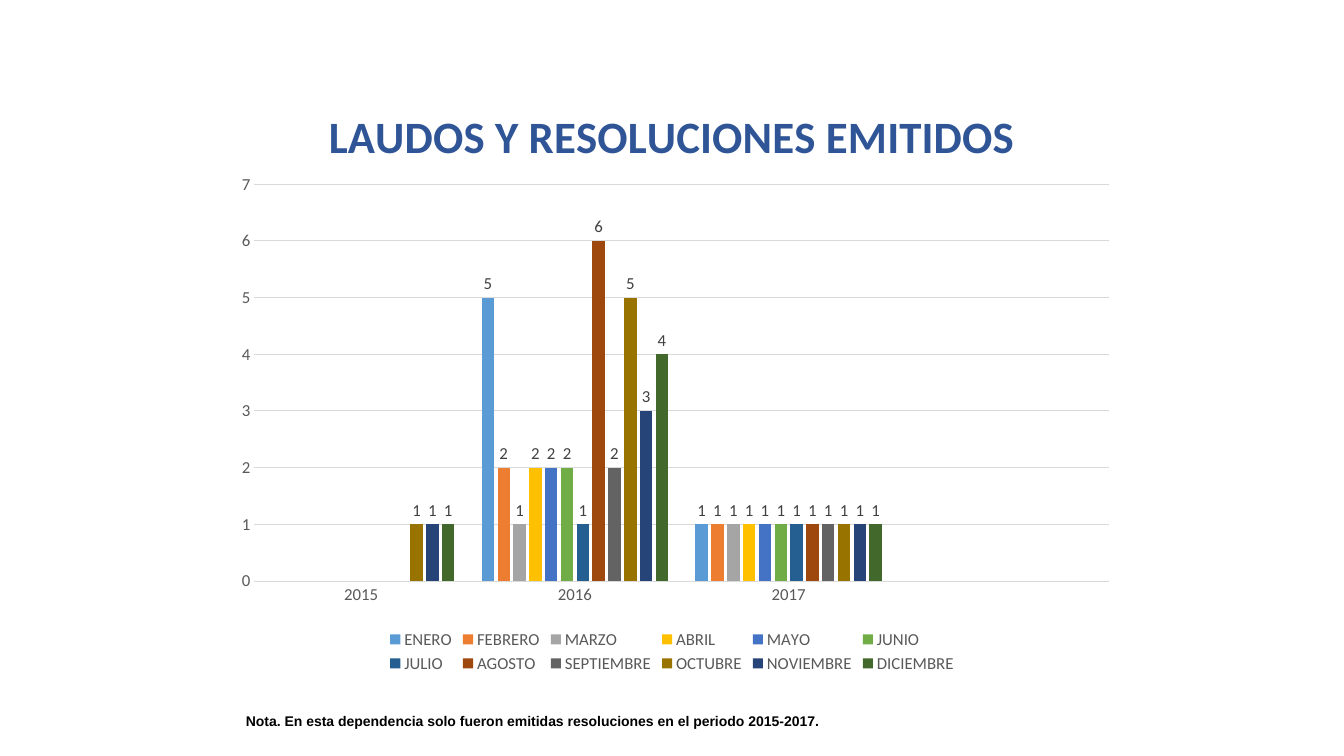
from dataclasses import dataclass

from lxml.etree import SubElement
from pptx import Presentation
from pptx.chart.chart import Chart
from pptx.chart.data import CategoryChartData
from pptx.chart.series import BarSeries
from pptx.dml.color import RGBColor
from pptx.enum.chart import XL_CHART_TYPE as ChartType
from pptx.enum.chart import XL_LABEL_POSITION as LabelPosition
from pptx.enum.chart import XL_LEGEND_POSITION as LegendPosition
from pptx.enum.chart import XL_TICK_MARK as TickMark
from pptx.enum.text import MSO_AUTO_SIZE as AutoSize
from pptx.oxml.ns import qn
from pptx.slide import Slide
from pptx.text.text import Font
from pptx.util import Inches, Pt

COLORS = {
    "title": "2F5597",
    "axis": "595959",
    "label": "404040",
    "grid": "D9D9D9",
    "note": "000000",
}
FORMATS = {
    "title": {"name": "Calibri", "size": Pt(32), "bold": True},
    "axis": {"name": "Calibri", "size": Pt(12), "bold": False},
    "label": {"name": "Calibri", "size": Pt(12), "bold": False},
    "note": {"name": "Arial", "size": Pt(10), "bold": True},
}
YEARS = ["2015", "2016", "2017", ""]
TITLE = "LAUDOS Y RESOLUCIONES EMITIDOS"
NOTE = "Nota. En esta dependencia solo fueron emitidas resoluciones en el periodo 2015-2017."


@dataclass(frozen=True)
class Month:
    """A month's series: its name, bar color and rulings for 2015 and 2016."""

    name: str
    color: str
    in_2015: int | None
    in_2016: int

    @property
    def values(self) -> list[int | None]:
        """Return one value per year; every month of 2017 had one ruling."""
        return [self.in_2015, self.in_2016, 1, None]


MONTHS = [
    Month("ENERO", "5B9BD5", None, 5),
    Month("FEBRERO", "ED7D31", None, 2),
    Month("MARZO", "A5A5A5", None, 1),
    Month("ABRIL", "FFC000", None, 2),
    Month("MAYO", "4472C4", None, 2),
    Month("JUNIO", "70AD47", None, 2),
    Month("JULIO", "255E91", None, 1),
    Month("AGOSTO", "9E480E", None, 6),
    Month("SEPTIEMBRE", "636363", None, 2),
    Month("OCTUBRE", "997300", 1, 5),
    Month("NOVIEMBRE", "264478", 1, 3),
    Month("DICIEMBRE", "43682B", 1, 4),
]


def set_attributes(target: object, values: dict[str, object]) -> None:
    """Set every attribute named in the dict."""
    for name, value in values.items():
        setattr(target, name, value)


def style_font(font: Font, role: str) -> None:
    """Apply the format and color of a text role."""
    set_attributes(font, FORMATS[role])
    font.color.rgb = RGBColor.from_string(COLORS[role])


def place_plot(chart: Chart) -> None:
    """Fix the inner plot area as fractions of the chart frame."""
    plot_area = chart.plots[0]._element.getparent()
    layout = plot_area.find(qn("c:layout"))
    if layout is None:
        layout = SubElement(plot_area, qn("c:layout"))
        plot_area.insert(0, layout)
    manual = SubElement(layout, qn("c:manualLayout"))
    settings = {"layoutTarget": "inner", "xMode": "edge", "yMode": "edge",
                "x": "0.034", "y": "0.175", "w": "0.954", "h": "0.664"}
    for name, value in settings.items():
        SubElement(manual, qn(f"c:{name}")).set("val", value)


def style_series(series: BarSeries, month: Month) -> None:
    """Color one month's bars and show their values above them."""
    series.format.fill.solid()
    series.format.fill.fore_color.rgb = RGBColor.from_string(month.color)
    labels = series.data_labels
    set_attributes(labels, {"show_value": True, "position": LabelPosition.OUTSIDE_END})
    style_font(labels.font, "label")


def style_axes(chart: Chart) -> None:
    """Format both axes and the value gridlines."""
    for axis in (chart.category_axis, chart.value_axis):
        set_attributes(axis, {"major_tick_mark": TickMark.NONE, "minor_tick_mark": TickMark.NONE})
        style_font(axis.tick_labels.font, "axis")
    set_attributes(chart.value_axis, {"minimum_scale": 0, "maximum_scale": 7, "major_unit": 1})
    chart.value_axis.format.line.fill.background()
    for line in (chart.category_axis.format.line, chart.value_axis.major_gridlines.format.line):
        line.width = Pt(0.75)
        line.color.rgb = RGBColor.from_string(COLORS["grid"])


def add_rulings_chart(slide: Slide) -> None:
    """Add the clustered columns of rulings by year and month."""
    data = CategoryChartData(number_format="General")
    data.categories = YEARS
    for month in MONTHS:
        data.add_series(month.name, month.values)
    chart = slide.shapes.add_chart(
        ChartType.COLUMN_CLUSTERED, Inches(2.22), Inches(0.79), Inches(8.89), Inches(5.93), data
    ).chart
    set_attributes(chart.font, {"name": "Calibri", "size": Pt(10)})
    chart.chart_title.text_frame.text = TITLE
    style_font(chart.chart_title.text_frame.paragraphs[0].runs[0].font, "title")
    chart.chart_title.include_in_layout = False
    set_attributes(chart.plots[0], {"gap_width": 219, "overlap": -27, "vary_by_categories": False})
    for series, month in zip(chart.plots[0].series, MONTHS):
        style_series(series, month)
    style_axes(chart)
    chart.has_legend = True
    set_attributes(chart.legend, {"position": LegendPosition.BOTTOM, "include_in_layout": False})
    style_font(chart.legend.font, "axis")
    place_plot(chart)


def add_note(slide: Slide) -> None:
    """Add the note under the chart."""
    frame = slide.shapes.add_textbox(Inches(2.34), Inches(7.02), Inches(8.71), Inches(0.27)).text_frame
    set_attributes(frame, {"word_wrap": True, "auto_size": AutoSize.SHAPE_TO_FIT_TEXT, "text": NOTE})
    style_font(frame.paragraphs[0].runs[0].font, "note")


def main() -> None:
    """Build and save the slide."""
    presentation = Presentation()
    set_attributes(presentation, {"slide_width": Inches(13.33), "slide_height": Inches(7.5)})
    slide = presentation.slides.add_slide(presentation.slide_layouts[6])
    add_rulings_chart(slide)
    add_note(slide)
    presentation.save("out.pptx")


if __name__ == "__main__":
    main()
